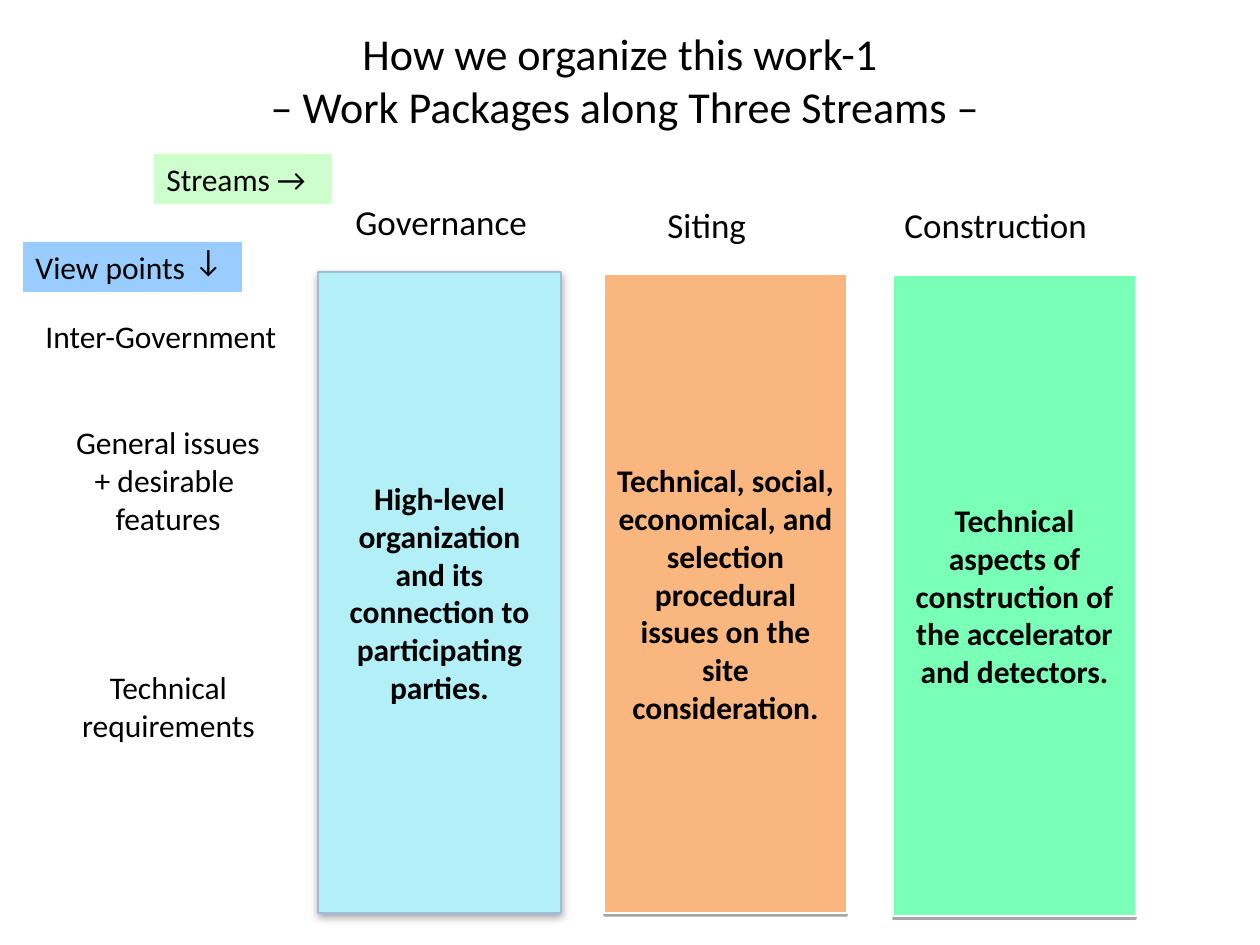
import dataclasses

import lxml.etree
import pptx
import pptx.dml.color
import pptx.enum.shapes
import pptx.enum.text
import pptx.oxml.ns
import pptx.util

EMU_PER_PX = 914400 / 126
ALIGN = pptx.enum.text.PP_ALIGN
ANCHOR = pptx.enum.text.MSO_ANCHOR


@dataclasses.dataclass(frozen=True)
class Theme:
    font: str = "Calibri"
    text: str = "000000"
    governance: str = "B3EFF7"
    governance_line: str = "A0BBDC"
    siting: str = "F9B67F"
    construction: str = "79FFB6"
    plain_line: str = "FFFFFF"
    streams: str = "CCFFCC"
    view_points: str = "99CCFF"
    title_size: float = 25.2
    heading_size: int = 20
    body_size: int = 18


THEME = Theme()


def px(value):
    return pptx.util.Emu(round(value * EMU_PER_PX))


def rgb(value):
    return pptx.dml.color.RGBColor.from_string(value)


def write_text(shape, text, size, align=ALIGN.LEFT, anchor=ANCHOR.TOP, bold=False, wrap=True):
    text_frame = shape.text_frame
    text_frame.text = text
    text_frame.word_wrap = wrap
    text_frame.vertical_anchor = anchor
    for paragraph in text_frame.paragraphs:
        paragraph.alignment = align
        for run in paragraph.runs:
            run.font.name = THEME.font
            run.font.size = pptx.util.Pt(size)
            run.font.bold = bold
            run.font.color.rgb = rgb(THEME.text)


def add_label(slide, box, text, size, **text_style):
    label = slide.shapes.add_textbox(*map(px, box))
    write_text(label, text, size, **text_style)
    return label


def add_rectangle(slide, box, fill):
    rectangle = slide.shapes.add_shape(
        pptx.enum.shapes.MSO_SHAPE.RECTANGLE, *map(px, box)
    )
    rectangle.shadow.inherit = False
    rectangle.fill.solid()
    rectangle.fill.fore_color.rgb = rgb(fill)
    rectangle.line.fill.background()
    return rectangle


def add_tag(slide, box, text, fill):
    tag = add_rectangle(slide, box, fill)
    write_text(tag, text, THEME.body_size)


def add_shadow(shape, blur):
    qn = pptx.oxml.ns.qn
    effects = shape._element.spPr.find(qn("a:effectLst"))
    shadow = lxml.etree.SubElement(
        effects,
        qn("a:outerShdw"),
        blurRad=str(pptx.util.Pt(blur)),
        dist=str(pptx.util.Pt(1.8)),
        dir="5400000",
        rotWithShape="0",
    )
    color = lxml.etree.SubElement(shadow, qn("a:srgbClr"), val=THEME.text)
    lxml.etree.SubElement(color, qn("a:alpha"), val="35000")


def add_stream(slide, heading, heading_box, text, box, fill, line, blur):
    add_label(slide, heading_box, heading, THEME.heading_size, wrap=False)
    bar = add_rectangle(slide, box, fill)
    bar.line.color.rgb = rgb(line)
    bar.line.width = pptx.util.Pt(0.75)
    add_shadow(bar, blur)
    write_text(bar, text, THEME.body_size, ALIGN.CENTER, ANCHOR.MIDDLE, bold=True)


def main():
    presentation = pptx.Presentation()
    presentation.slide_width = px(1260)
    presentation.slide_height = px(945)
    slide = presentation.slides.add_slide(presentation.slide_layouts[6])

    add_label(
        slide,
        (0, 29, 1240, 100),
        "How we organize this work-1\v – Work Packages along Three Streams –",
        THEME.title_size,
        align=ALIGN.CENTER,
        anchor=ANCHOR.MIDDLE,
    )

    streams = [
        ("Governance", (343, 194, 198, 54),
         "High-level organization and its connection to participating parties.",
         (318, 272, 243, 641), THEME.governance, THEME.governance_line, 5),
        ("Siting", (655, 197, 105, 54),
         "Technical, social, economical, and selection procedural issues "
         "on the site consideration.",
         (604, 274, 243, 639), THEME.siting, THEME.plain_line, 0),
        ("Construction", (892, 197, 208, 54),
         "Technical aspects of construction of the accelerator and detectors.",
         (893, 275, 243, 641), THEME.construction, THEME.plain_line, 0),
    ]
    for stream in streams:
        add_stream(slide, *stream)

    add_tag(slide, (154, 154, 178, 50), "Streams →", THEME.streams)
    add_tag(slide, (23, 242, 219, 50), "View points", THEME.view_points)
    arrow = add_label(slide, (183, 241, 57, 50), "→", THEME.body_size)
    arrow.rotation = 90

    view_points = [
        ((33, 311, 258, 50), "Inter-Government", ALIGN.LEFT),
        ((63, 417, 210, 126), "General issues\n+ desirable \nfeatures", ALIGN.CENTER),
        ((69, 662, 199, 126), "Technical\nrequirements", ALIGN.CENTER),
    ]
    for box, text, align in view_points:
        add_label(slide, box, text, THEME.body_size, align=align, wrap=False)

    presentation.save("out.pptx")


if __name__ == "__main__":
    main()
